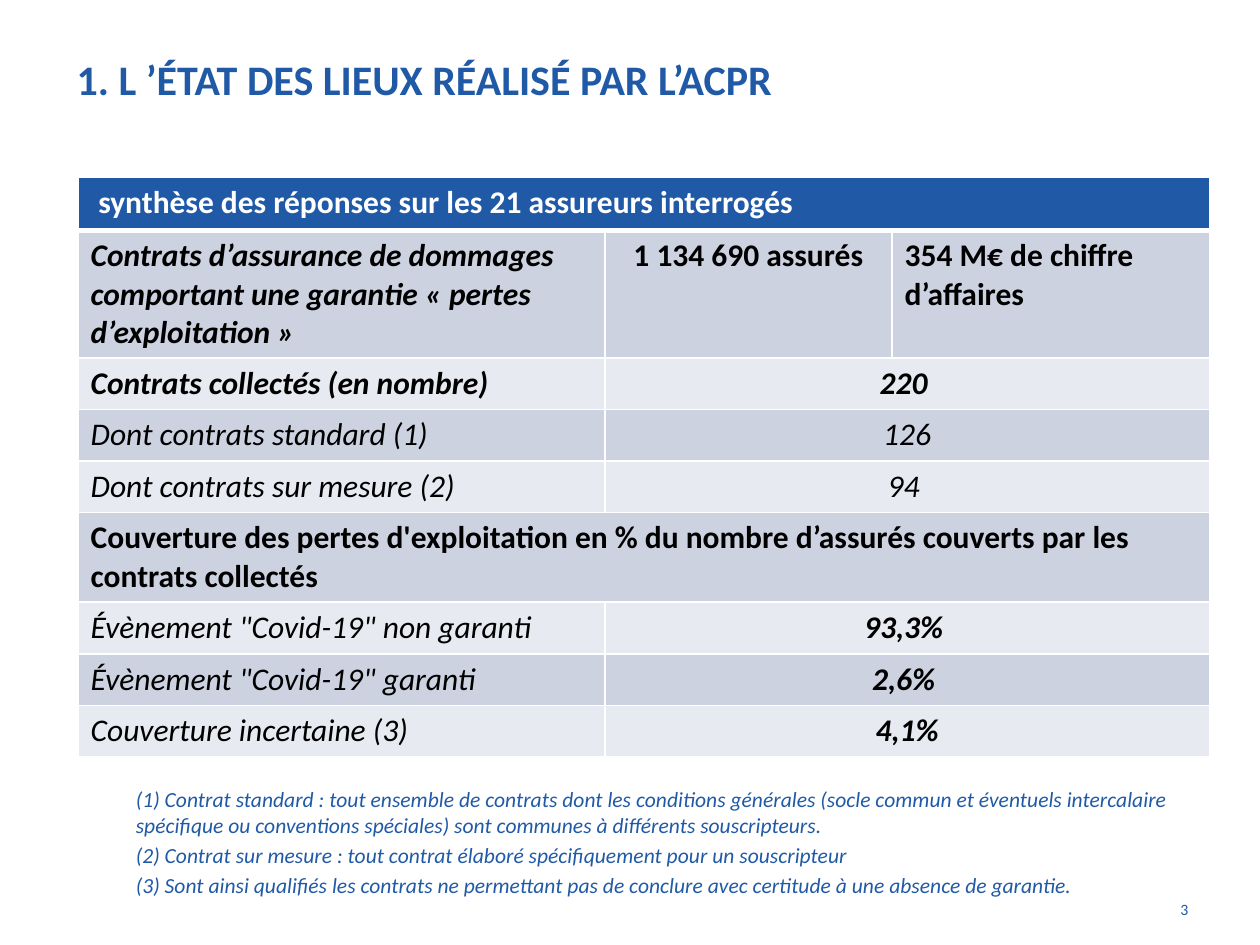
from dataclasses import dataclass
from typing import Optional

from lxml.etree import SubElement
from pptx import Presentation
from pptx.dml.color import RGBColor
from pptx.enum.text import MSO_ANCHOR, PP_ALIGN
from pptx.oxml.ns import qn
from pptx.util import Inches, Pt

BLUE = RGBColor(0x20, 0x5A, 0xA7)
BLACK = RGBColor(0x00, 0x00, 0x00)
WHITE = RGBColor(0xFF, 0xFF, 0xFF)
BANDS = (RGBColor(0xE8, 0xEA, 0xF1), RGBColor(0xCD, 0xD2, 0xE1))

BOLD = {"bold": True}
ITALIC = {"italic": True}
BOLD_ITALIC = {**BOLD, **ITALIC}


@dataclass
class Cell:
    text: str
    fmt: dict
    span: int = 1
    align: Optional[PP_ALIGN] = None


@dataclass
class Row:
    cells: list[Cell]
    height: float = 0.41


def pair(label: str, label_fmt: dict, value: str, value_fmt: dict) -> Row:
    """A label followed by one value across the last two columns."""
    return Row([Cell(label, label_fmt), Cell(value, value_fmt, 2, PP_ALIGN.CENTER)])


COLUMNS = (4.18, 2.28, 2.52)
ROWS = [
    Row([Cell("synthèse des réponses sur les 21 assureurs interrogés",
              {**BOLD, "color": WHITE}, 3)], 0.42),
    Row([Cell("Contrats d’assurance de dommages comportant une garantie "
              "« pertes d’exploitation »", BOLD_ITALIC),
         Cell("1 134 690 assurés", BOLD, align=PP_ALIGN.CENTER),
         Cell("354 M€ de chiffre d’affaires", BOLD)], 1.01),
    pair("Contrats collectés (en nombre)", BOLD_ITALIC, "220 ", BOLD_ITALIC),
    pair("Dont contrats standard (1)", ITALIC, "126", ITALIC),
    pair("Dont contrats sur mesure (2)", ITALIC, "94 ", ITALIC),
    Row([Cell("Couverture des pertes d'exploitation en % du nombre d’assurés "
              "couverts par les contrats collectés", BOLD, 3)], 0.71),
    pair('Évènement "Covid-19" non garanti', ITALIC, "93,3% ", BOLD_ITALIC),
    pair('Évènement "Covid-19" garanti', ITALIC, "2,6% ", BOLD_ITALIC),
    pair("Couverture incertaine (3)", ITALIC, "4,1%", BOLD_ITALIC),
]

NOTES = [
    "(1) Contrat standard : tout ensemble de contrats dont les conditions générales "
    "(socle commun et éventuels intercalaire spécifique ou conventions spéciales) "
    "sont communes à différents souscripteurs.",
    "(2) Contrat sur mesure : tout contrat élaboré spécifiquement pour un souscripteur",
    "(3) Sont ainsi qualifiés les contrats ne permettant pas de conclure avec "
    "certitude à une absence de garantie.",
]


def write(p, text: str, fmt: dict, align: Optional[PP_ALIGN] = None) -> None:
    p.alignment = align
    r = p.add_run()
    r.text = text
    for name, value in {"name": "Calibri", **fmt}.items():
        if name == "color":
            r.font.color.rgb = value
        else:
            setattr(r.font, name, value)


def add_text(s, box: tuple, lines: list[str], fmt: dict, align=None,
             anchor=MSO_ANCHOR.TOP, gap: float = 0) -> None:
    tf = s.shapes.add_textbox(*map(Inches, box)).text_frame
    tf.word_wrap = True
    tf.vertical_anchor = anchor
    for i, line in enumerate(lines):
        p = tf.add_paragraph() if i else tf.paragraphs[0]
        if i:
            p.space_before = Pt(gap)
        write(p, line, fmt, align)


def set_borders(cell, bottom: float) -> None:
    """White cell borders, placed ahead of the fill as the schema asks."""
    tc_pr = cell._tc.get_or_add_tcPr()
    widths = {"lnL": 1, "lnR": 1, "lnT": 1, "lnB": bottom}
    for i, (side, width) in enumerate(widths.items()):
        ln = SubElement(tc_pr, qn(f"a:{side}"), w=str(Pt(width)))
        fill = SubElement(ln, qn("a:solidFill"))
        SubElement(fill, qn("a:srgbClr"), val=str(WHITE))
        tc_pr.insert(i, ln)


def add_summary(s, left: float, top: float) -> None:
    tbl = s.shapes.add_table(
        len(ROWS), len(COLUMNS), Inches(left), Inches(top),
        Inches(sum(COLUMNS)), Inches(sum(row.height for row in ROWS))).table
    for col, width in zip(tbl.columns, COLUMNS):
        col.width = Inches(width)
    for y, row in enumerate(ROWS):
        tbl.rows[y].height = Inches(row.height)
        for x in range(len(COLUMNS)):
            cell = tbl.cell(y, x)
            cell.fill.solid()
            cell.fill.fore_color.rgb = BANDS[y % 2] if y else BLUE
            set_borders(cell, 1 if y else 3)
        x = 0
        for item in row.cells:
            cell = tbl.cell(y, x)
            if item.span > 1:
                cell.merge(tbl.cell(y, x + item.span - 1))
            write(cell.text_frame.paragraphs[0], item.text,
                  {"size": Pt(18), "color": BLACK, **item.fmt}, item.align)
            x += item.span
    tbl.cell(0, 0).margin_left = Inches(0.16)


def main() -> None:
    prs = Presentation()
    prs.slide_width, prs.slide_height = Inches(10), Inches(7.5)
    s = prs.slides.add_slide(prs.slide_layouts[6])

    # Title
    add_text(s, (0.51, 0, 9, 1.25), ["1. L\u00a0’ÉTAT DES LIEUX RÉALISÉ PAR L’ACPR"],
             {"size": Pt(24), "color": BLUE, **BOLD}, anchor=MSO_ANCHOR.MIDDLE)

    # Survey results
    add_summary(s, 0.62, 1.41)

    # Footnotes and page number
    add_text(s, (0.98, 6.19, 8.62, 1), NOTES,
             {"size": Pt(12.3), "color": BLUE, **ITALIC}, gap=2.4)
    add_text(s, (8.94, 7.09, 0.59, 0.39), ["3"],
             {"size": Pt(9), "color": BLUE}, PP_ALIGN.RIGHT)

    prs.save("out.pptx")


if __name__ == "__main__":
    main()
